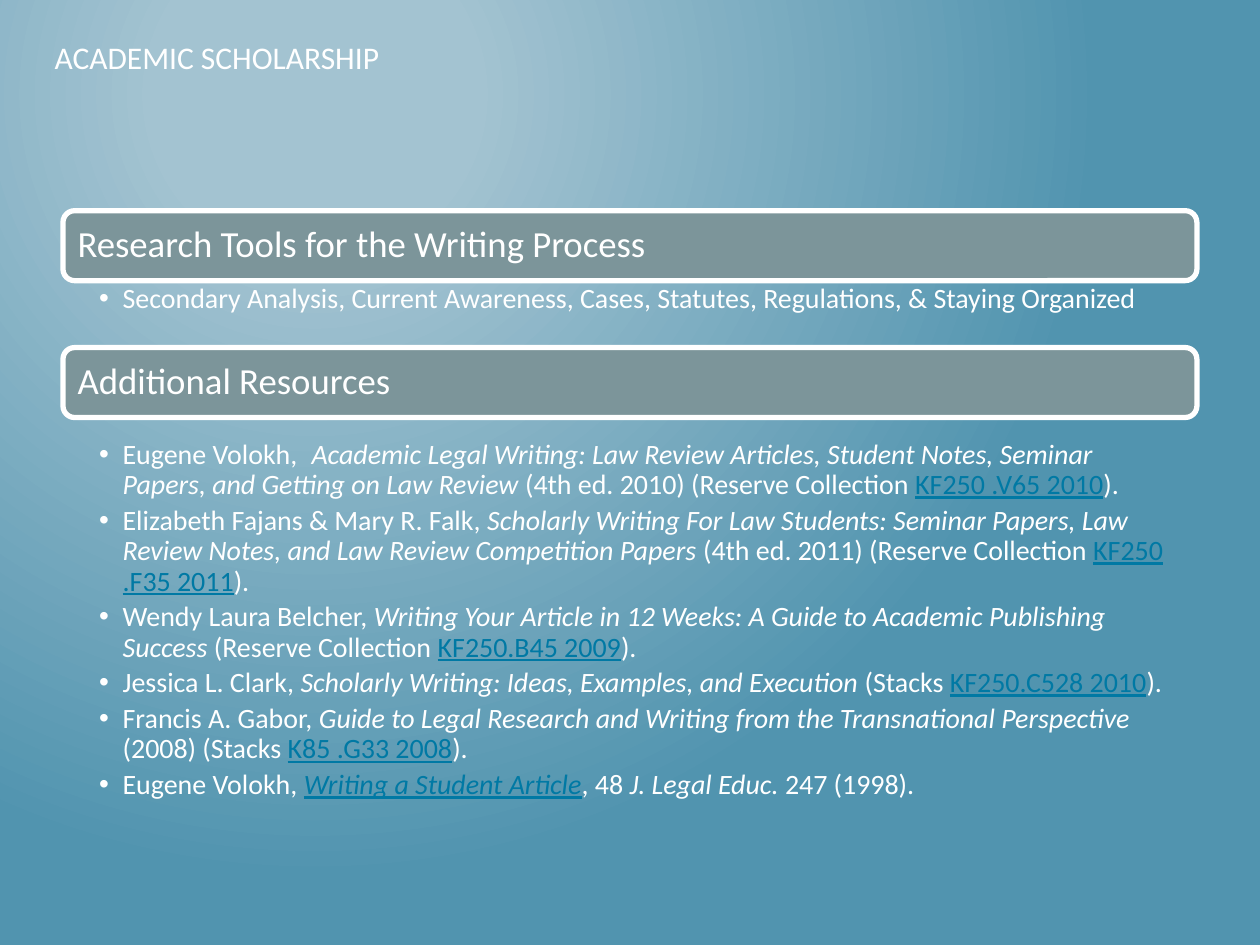
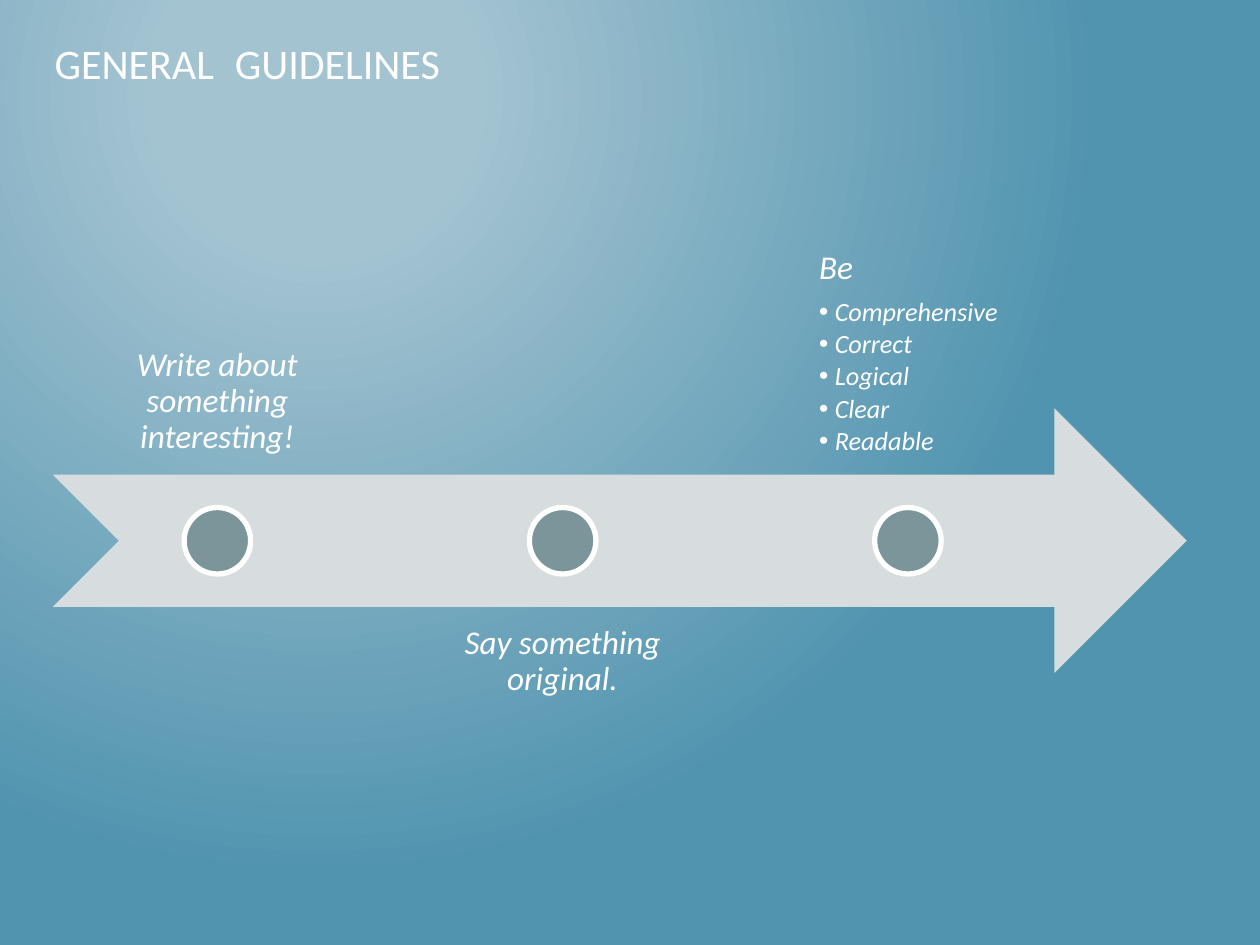
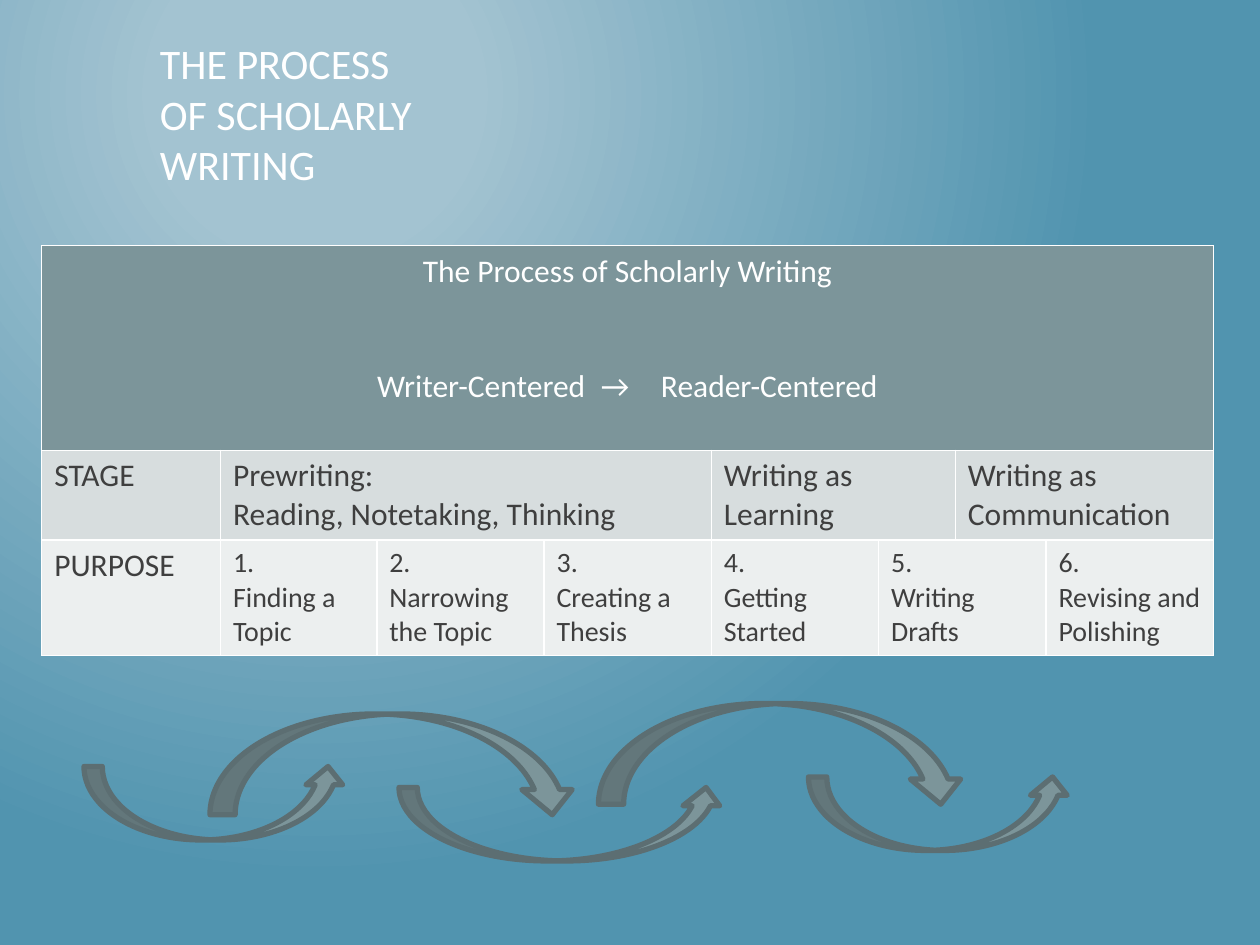
from pptx import Presentation
from pptx.dml.color import RGBColor
from pptx.enum.shapes import MSO_SHAPE as Geo
from pptx.enum.text import MSO_ANCHOR as Anchor, MSO_AUTO_SIZE as Fit, PP_ALIGN as Align
from pptx.oxml import parse_xml
from pptx.oxml.ns import nsdecls, qn
from pptx.util import Pt

FONT = "Calibri"
WHITE, LINK, DARK = "FFFFFF", "0079A4", "3F3F3F"
SLATE, PALE, MIST, EDGE = "7C959A", "D7DDDE", "ECEFEF", "5C6E72"
GLOW, SEA = "A3C3D1", "5194AF"
LEFT, WIDE = 36, 648
HARD, EN, EM = chr(160), chr(8194), chr(8195)

BOOKS = [
    [(f"Eugene Volokh,{EN}", ""),
     ("Academic Legal Writing: Law Review Articles, Student Notes, Seminar Papers, "
      "and Getting on Law Review ", "i"),
     ("(4th ed. 2010) (Reserve Collection ", ""), ("KF250 .V65 2010", "u"), (").", "")],
    [("Elizabeth Fajans & Mary R. Falk, ", ""),
     ("Scholarly Writing For Law Students: Seminar Papers, Law Review Notes, "
      "and Law Review Competition Papers", "i"),
     (f" (4th ed. 2011) (Reserve Collection{HARD}", ""), ("KF250 .F35 2011", "u"), (").", "")],
    [("Wendy Laura Belcher, ", ""),
     ("Writing Your Article in 12 Weeks: A Guide to Academic Publishing Success", "i"),
     (" (Reserve Collection ", ""), ("KF250.B45 2009", "u"), (").", "")],
    [("Jessica L. Clark, ", ""),
     ("Scholarly Writing: Ideas, Examples, and Execution", "i"),
     (" (Stacks ", ""), ("KF250.C528 2010", "u"), (").", "")],
    [("Francis A. Gabor, ", ""),
     ("Guide to Legal Research and Writing from the Transnational Perspective", "i"),
     (" (2008) (Stacks ", ""), ("K85 .G33 2008", "u"), (").", "")],
    [("Eugene Volokh, ", ""), ("Writing a Student Article", "iu"), (", 48 ", ""),
     ("J. Legal Educ. ", "i"), ("247 (1998).", "")],
]
TOPICS = ["Secondary Analysis, Current Awareness, Cases, Statutes, Regulations, "
          "& Staying Organized"]
TRAITS = ["Comprehensive", "Correct", "Logical", "Clear", "Readable"]

COLS = [102.2, 89.3, 95.6, 95.6, 95.6, 43.9, 51.8, 95.6]
ROWS = [117, 51, 66]
STAGES = [
    (0, 1, ["STAGE"]),
    (1, 3, ["Prewriting:", "Reading, Notetaking, Thinking"]),
    (4, 2, ["Writing as Learning"]),
    (6, 2, ["Writing as Communication"]),
]
STEPS = [
    (1, 1, ["1.", "Finding a Topic"]),
    (2, 1, ["2. Narrowing the Topic"]),
    (3, 1, ["3.", "Creating a Thesis"]),
    (4, 1, ["4.", "Getting Started"]),
    (5, 2, ["5.", "Writing Drafts"]),
    (7, 1, ["6.", "Revising and Polishing"]),
]
CURVES = [
    (Geo.CURVED_UP_ARROW, 48, 438, 150, 42),
    (Geo.CURVED_DOWN_ARROW, 120, 408, 210, 57.6),
    (Geo.CURVED_UP_ARROW, 228, 450, 186, 42),
    (Geo.CURVED_DOWN_ARROW, 342, 402, 210, 57.6),
    (Geo.CURVED_UP_ARROW, 462, 444, 150, 42),
]


def hue(code):
    return RGBColor.from_string(code)


def write(frame, text, size=16, tint=WHITE, ital=False, align=Align.LEFT,
          lead=1.0, above=0, below=0, hang=0):
    para = frame.paragraphs[0]
    if para.runs:
        para = frame.add_paragraph()
    para.alignment, para.line_spacing = align, lead
    para.space_before, para.space_after = Pt(above), Pt(below)
    props = para._p.get_or_add_pPr()
    props.set("marL", str(Pt(hang)))
    props.set("indent", str(-Pt(hang)))
    dot = '<a:buChar %s char="•"/>' if hang else "<a:buNone %s/>"
    props.append(parse_xml(dot % nsdecls("a")))
    for part, style in [(text, "")] if isinstance(text, str) else text:
        run = para.add_run()
        run.text = part
        font = run.font
        font.name, font.size, font.bold = FONT, Pt(size), False
        font.italic = ital or "i" in style
        font.underline = "u" in style
        font.color.rgb = hue(LINK if "u" in style else tint)


def setup(frame, pads, anchor=Anchor.TOP):
    frame.word_wrap, frame.auto_size = True, Fit.NONE
    frame.vertical_anchor = anchor
    (frame.margin_left, frame.margin_top,
     frame.margin_right, frame.margin_bottom) = [Pt(pad) for pad in pads]
    return frame


def move(shape, *box):
    shape.left, shape.top, shape.width, shape.height = [Pt(n) for n in box]
    return shape


def add_title(slide, text, size, box=(24, 18, 672, 60)):
    holder = move(slide.shapes.title, *box)
    write(setup(holder.text_frame, (7.2, 3.6, 7.2, 3.6)), text, size=size)


def add_form(slide, kind, box, fill, line=None):
    form = slide.shapes.add_shape(kind, *[Pt(n) for n in box])
    form.shadow.inherit = False
    form.fill.solid()
    form.fill.fore_color.rgb = hue(fill)
    if line:
        form.line.color.rgb, form.line.width = hue(line), Pt(3)
    else:
        form.line.fill.background()
    return form


def add_bar(slide, text, top):
    bar = add_form(slide, Geo.ROUNDED_RECTANGLE, (LEFT, top, WIDE, 40), SLATE, WHITE)
    write(setup(bar.text_frame, (6.4, 0, 6.4, 0), Anchor.MIDDLE), text, size=21, lead=0.9)


def fill_list(holder, items, top, high):
    move(holder, LEFT, top, WIDE, high)
    frame = setup(holder.text_frame, (20.6, 2.3, 16, 2.3))
    for item in items:
        write(frame, item, lead=0.9, below=3.2, hang=13.5)


def add_note(slide, text, box, anchor):
    note = slide.shapes.add_textbox(*[Pt(n) for n in box])
    write(setup(note.text_frame, [10.8] * 4, anchor), text, size=19, ital=True,
          align=Align.CENTER, lead=0.9, below=6.65)


def edge_cell(cell):
    props = cell._tc.get_or_add_tcPr()
    for spot, side in enumerate("LRTB"):
        props.insert(spot, parse_xml(
            f'<a:ln{side} {nsdecls("a")} w="{Pt(1)}"><a:solidFill>'
            f'<a:srgbClr val="{WHITE}"/></a:solidFill></a:ln{side}>'))


def fill_row(grid, row, cells, size):
    for col, span, lines in cells:
        cell = grid.cell(row, col)
        if span > 1:
            cell.merge(grid.cell(row, col + span - 1))
        for text in lines:
            write(cell.text_frame, text, size=size, tint=DARK)


def add_grid(slide):
    box = [Pt(n) for n in (23.8, 140.4, sum(COLS), sum(ROWS))]
    grid = slide.shapes.add_table(len(ROWS), len(COLS), *box).table
    grid.first_row = grid.horz_banding = False
    for col, wide in zip(grid.columns, COLS):
        col.width = Pt(wide)
    for row, high, fill in zip(grid.rows, ROWS, (SLATE, PALE, MIST)):
        row.height = Pt(high)
        for cell in row.cells:
            cell.fill.solid()
            cell.fill.fore_color.rgb = hue(fill)
            edge_cell(cell)
    head = grid.cell(0, 0)
    head.merge(grid.cell(0, len(COLS) - 1))
    write(head.text_frame, "The Process of Scholarly Writing", size=18, align=Align.CENTER)
    write(head.text_frame, f"Writer-Centered{EN}→{EM}Reader-Centered", size=18,
          align=Align.CENTER, above=43.8)
    fill_row(grid, 1, STAGES, 18)
    fill_row(grid, 2, [(0, 1, ["PURPOSE"])], 18)
    fill_row(grid, 2, STEPS, 16)


def paint_back(master):
    master.background.fill.gradient()
    old = master.element.find(".//" + qn("a:gradFill"))
    stops = "".join(f'<a:gs pos="{pos}"><a:srgbClr val="{code}"/></a:gs>'
                    for pos, code in ((20000, GLOW), (100000, SEA)))
    old.getparent().replace(old, parse_xml(
        f'<a:gradFill {nsdecls("a")} rotWithShape="1"><a:gsLst>{stops}</a:gsLst>'
        '<a:path path="circle"><a:fillToRect l="50000" t="20000" r="100000" b="100000"/>'
        '</a:path></a:gradFill>'))


def add_scholar(deck):
    slide = deck.slides.add_slide(deck.slide_layouts[3])
    add_title(slide, "ACADEMIC SCHOLARSHIP", 18)
    add_bar(slide, "Research Tools for the Writing Process", 120.4)
    fill_list(slide.placeholders[1], TOPICS, 160.2, 27)
    add_bar(slide, "Additional Resources", 198.6)
    fill_list(slide.placeholders[2], BOOKS, 249.4, 220)


def add_guide(deck):
    slide = deck.slides.add_slide(deck.slide_layouts[1])
    add_title(slide, f"GENERAL{EN}GUIDELINES", 24)
    left, top, wide, high, step, dot = 30.2, 233.4, 188, 151.2, 197.3, 38
    add_form(slide, Geo.NOTCHED_RIGHT_ARROW, (left, top, WIDE, high), PALE)
    spots = [left + step * n for n in range(3)]
    for spot in spots:
        add_form(slide, Geo.OVAL, (spot + (wide - dot) / 2, top + (high - dot) / 2, dot, dot),
                 SLATE, WHITE)
    add_note(slide, "Write about something interesting!", (spots[0], 120, wide, high),
             Anchor.BOTTOM)
    add_note(slide, "Say something original.", (spots[1], 347, wide, high), Anchor.TOP)
    holder = move(slide.placeholders[1], spots[2], 120.3, wide, high)
    frame = setup(holder.text_frame, (43.2, 10.8, 10.8, 10.8), Anchor.BOTTOM)
    write(frame, "Be", size=19, ital=True, lead=0.9, below=6.65)
    for trait in TRAITS:
        write(frame, trait, size=15, ital=True, lead=0.9, below=2.25, hang=9)


def add_process(deck):
    slide = deck.slides.add_slide(deck.slide_layouts[5])
    add_title(slide, "THE PROCESS OF SCHOLARLY WRITING", 24, (84.2, 18, 163.4, 155.5))
    add_grid(slide)
    for kind, *box in CURVES:
        add_form(slide, kind, box, SLATE, EDGE)


def main():
    deck = Presentation()
    deck.slide_width, deck.slide_height = Pt(720), Pt(540)
    paint_back(deck.slide_master)
    add_scholar(deck)
    add_guide(deck)
    add_process(deck)
    deck.save("out.pptx")


if __name__ == "__main__":
    main()
